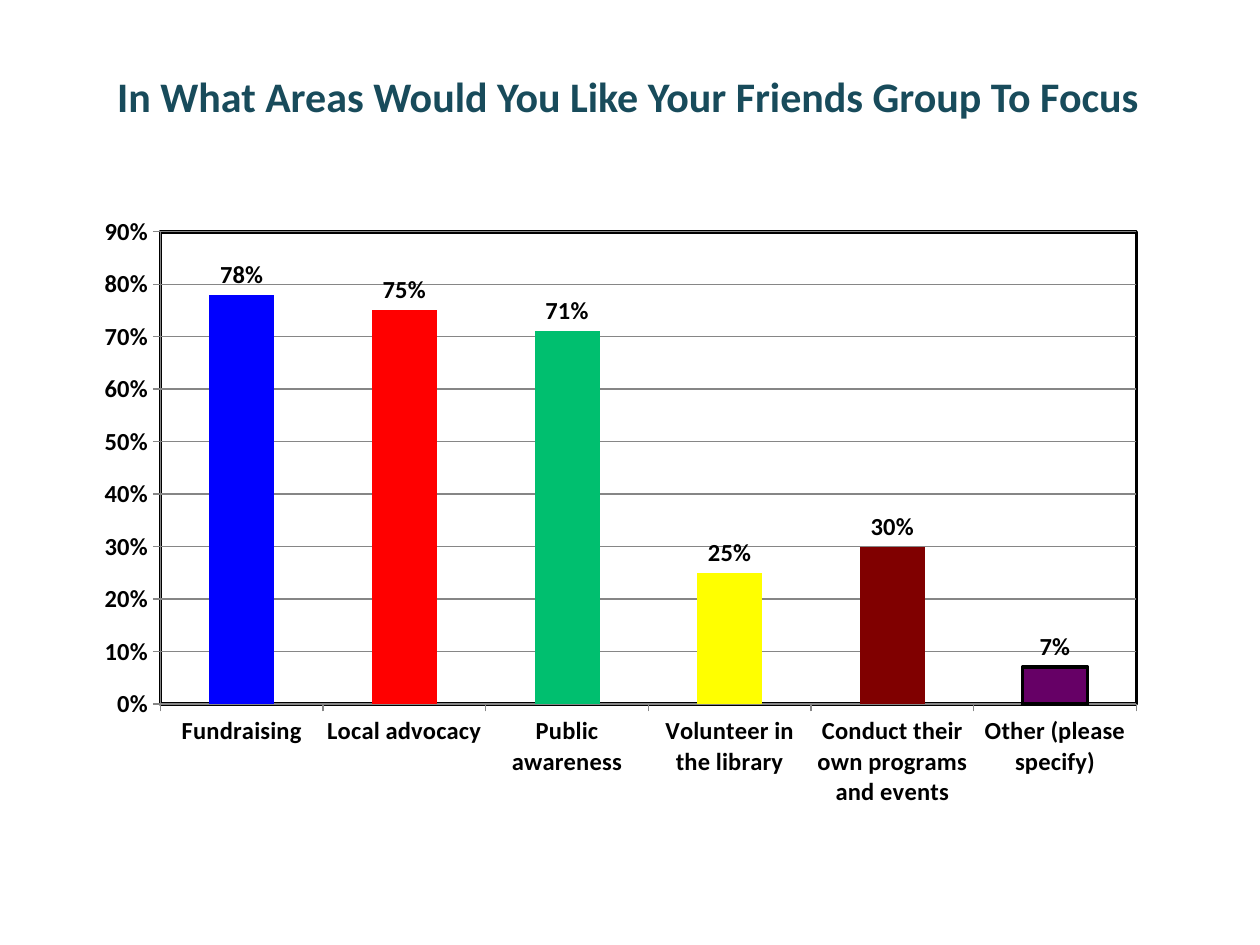
from lxml import etree
from pptx import Presentation
from pptx.chart.data import CategoryChartData
from pptx.dml.color import RGBColor
from pptx.enum import chart as ch, text
from pptx.oxml import parse_xml
from pptx.oxml.ns import nsdecls, qn
from pptx.util import Inches, Pt

# Content
TITLE = "In What Areas Would You Like Your Friends Group To Focus"
FOCUS_AREAS = [  # category, share, bar colour
    ("Fundraising", 0.78, "blue"),
    ("Local advocacy", 0.75, "red"),
    ("Public awareness", 0.71, "green"),
    ("Volunteer in the library", 0.25, "yellow"),
    ("Conduct their own programs and events", 0.30, "maroon"),
    ("Other (please specify)", 0.07, "purple"),
]
COLORS = {
    "title": "184B5B", "black": "000000", "white": "FFFFFF", "grid": "868686",
    "blue": "0000FF", "red": "FF0000", "green": "00BF6F",
    "yellow": "FFFF00", "maroon": "800000", "purple": "660066",
}
TITLE_BOX = (0.83, 0.51, 8.59, 0.5)
CHART_BOX = (0.65, 1.62, 8.54, 4.88)
PLOT_BOX = (1.27, 1.84, 7.75, 3.75)
BORDER = 2


def color(name):
    return RGBColor.from_string(COLORS[name])


def set_all(target, values):
    for name, value in values.items():
        setattr(target, name, value)


def set_font(font, size, color_name):
    set_all(font, {"name": "Calibri", "size": Pt(size), "bold": True})
    font.color.rgb = color(color_name)


def set_line(line, width, color_name):
    line.width = Pt(width)
    line.color.rgb = color(color_name)


def frame_plot(chart):
    """Fix the inner plot rectangle, and give it a white fill and black border."""
    plot_area = chart._chartSpace.chart.plotArea
    for layout in plot_area.findall(qn("c:layout")):
        plot_area.remove(layout)
    left, top, width, height = CHART_BOX
    x, y, w, h = PLOT_BOX
    fractions = {"x": (x - left) / width, "y": (y - top) / height,
                 "w": w / width, "h": h / height}
    sizes = "".join(f'<c:{k} val="{v:.3f}"/>' for k, v in fractions.items())
    plot_area.insert(0, parse_xml(
        f'<c:layout {nsdecls("c")}><c:manualLayout><c:layoutTarget val="inner"/>'
        f'<c:xMode val="edge"/><c:yMode val="edge"/>{sizes}</c:manualLayout></c:layout>'))
    fill, line = (f'<a:solidFill><a:srgbClr val="{COLORS[name]}"/></a:solidFill>'
                  for name in ("white", "black"))
    properties = etree.SubElement(plot_area, qn("c:spPr"))
    for xml in (fill, f'<a:ln w="{Pt(BORDER)}">{line}</a:ln>'):
        tag = xml.split(">", 1)[0]
        properties.append(parse_xml(xml.replace(tag, f'{tag} {nsdecls("a")}', 1)))


presentation = Presentation()
set_all(presentation, {"slide_width": Inches(10), "slide_height": Inches(7.5)})
slide = presentation.slides.add_slide(presentation.slide_layouts[5])

# Title
title = slide.shapes.title
set_all(title, dict(zip(("left", "top", "width", "height"), map(Inches, TITLE_BOX))))
set_all(title.text_frame, {"text": TITLE, "word_wrap": True,
                           "auto_size": text.MSO_AUTO_SIZE.NONE,
                           "vertical_anchor": text.MSO_ANCHOR.TOP})
paragraph = title.text_frame.paragraphs[0]
paragraph.alignment = text.PP_ALIGN.LEFT
set_font(paragraph.runs[0].font, 24, "title")

# Chart
names, shares, bar_colors = zip(*FOCUS_AREAS)
data = CategoryChartData(number_format="0%")
data.categories = names
data.add_series("Series 1", shares)
chart = slide.shapes.add_chart(
    ch.XL_CHART_TYPE.COLUMN_CLUSTERED, *map(Inches, CHART_BOX), data).chart
set_all(chart, {"has_legend": False, "has_title": False})
set_font(chart.font, 14, "black")
frame_plot(chart)

# Axes
value_axis, category_axis = chart.value_axis, chart.category_axis
set_all(value_axis, {"minimum_scale": 0, "maximum_scale": 0.9, "major_unit": 0.1,
                     "has_major_gridlines": True})
set_all(value_axis.tick_labels, {"number_format": "0%",
                                 "number_format_is_linked": False})
set_line(value_axis.major_gridlines.format.line, 0.75, "grid")
for axis in (value_axis, category_axis):
    axis.major_tick_mark = ch.XL_TICK_MARK.OUTSIDE
    set_font(axis.tick_labels.font, 14, "black")
    set_line(axis.format.line, 0.75, "grid")

# Bars and labels
plot = chart.plots[0]
set_all(plot, {"gap_width": 150, "vary_by_categories": False, "has_data_labels": True})
set_all(plot.data_labels, {"show_value": True, "number_format": "0%",
                           "number_format_is_linked": False,
                           "position": ch.XL_LABEL_POSITION.OUTSIDE_END})
set_font(plot.data_labels.font, 14, "black")
bars = plot.series[0]
for index, name in enumerate(bar_colors):
    fill = bars.points[index].format.fill
    fill.solid()
    fill.fore_color.rgb = color(name)
set_line(bars.points[len(names) - 1].format.line, BORDER, "black")

presentation.save("out.pptx")
